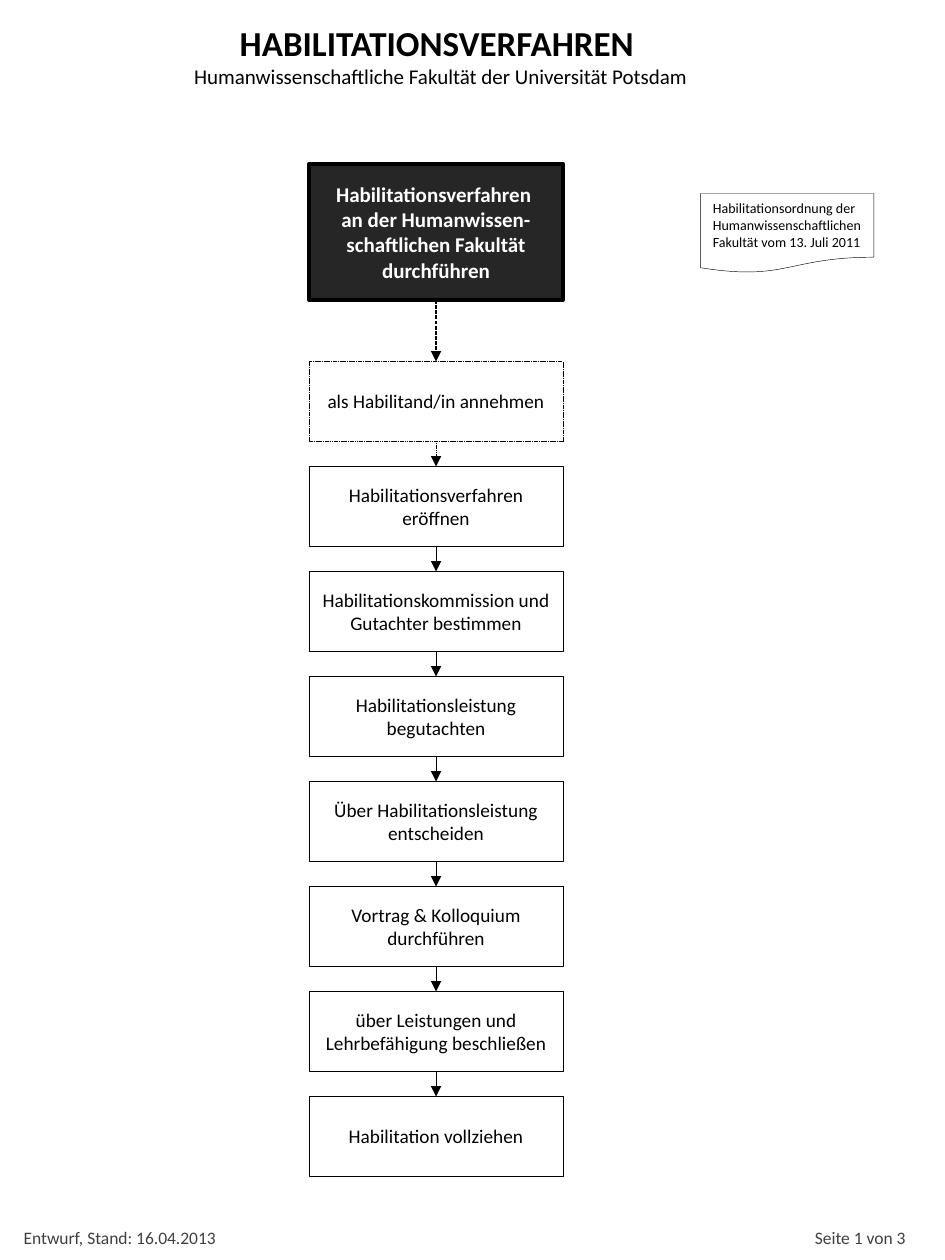
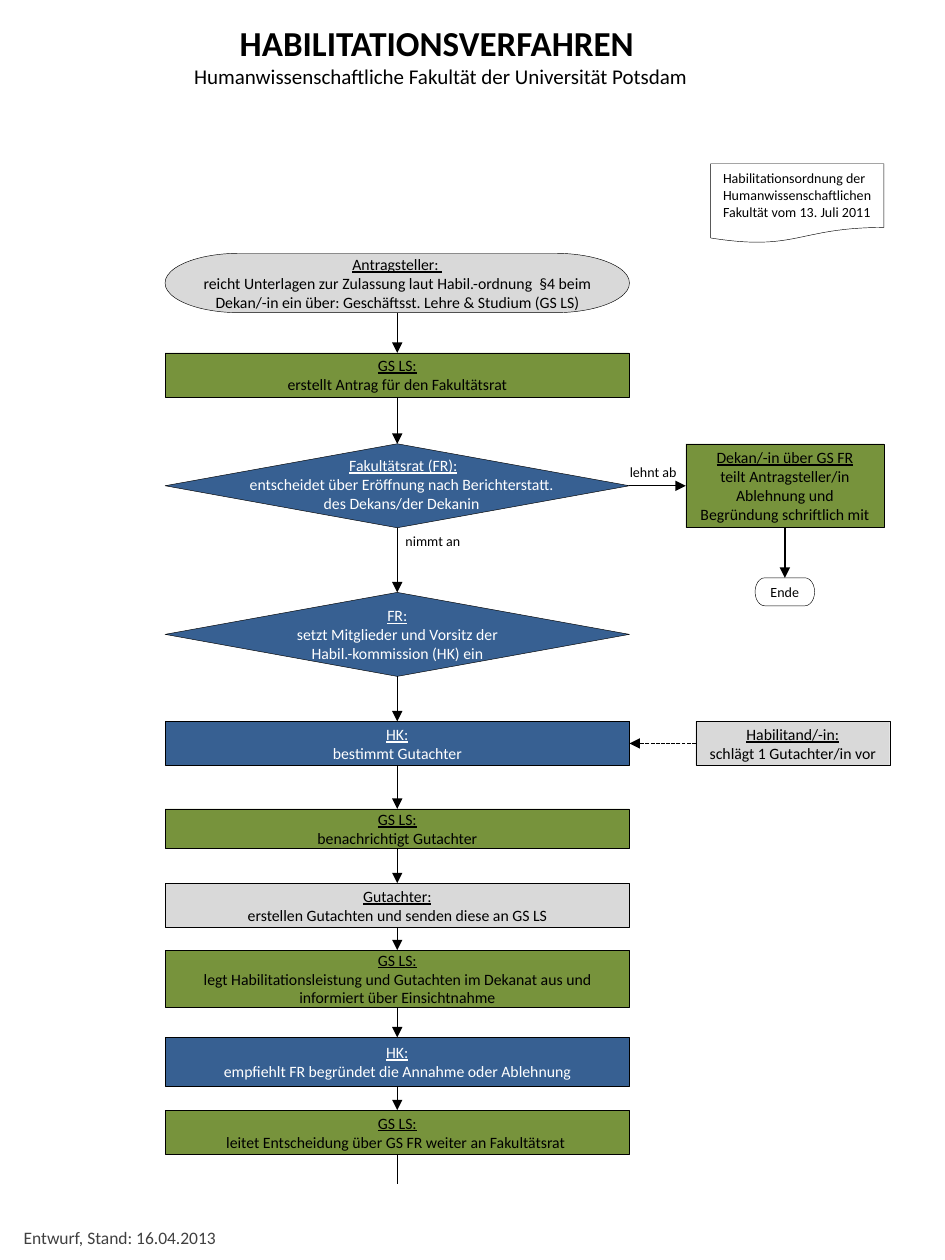
"""Build two flowchart slides on the habilitation procedure."""
from itertools import pairwise

from lxml import etree
from pptx import Presentation
from pptx.dml.color import RGBColor
from pptx.enum import dml, shapes, text
from pptx.oxml import ns
from pptx.util import Pt

BLACK = RGBColor(0x00, 0x00, 0x00)
WHITE = RGBColor(0xFF, 0xFF, 0xFF)
CHARCOAL = RGBColor(0x26, 0x26, 0x26)
FOOTER_GRAY = RGBColor(0x40, 0x40, 0x40)
GRAY = RGBColor(0xD9, 0xD9, 0xD9)
BLUE = RGBColor(0x37, 0x60, 0x92)
GREEN = RGBColor(0x77, 0x93, 0x3C)

KIND = shapes.MSO_SHAPE
PROCESS, DECISION = KIND.FLOWCHART_PROCESS, KIND.FLOWCHART_DECISION
TERMINATOR, DOCUMENT = KIND.FLOWCHART_TERMINATOR, KIND.FLOWCHART_DOCUMENT
RECTANGLE = KIND.RECTANGLE
CENTER = text.PP_ALIGN.CENTER
DASHED = dml.MSO_LINE.SQUARE_DOT
TOP, LEFT, BOTTOM, RIGHT = range(4)

TITLE = "HABILITATIONSVERFAHREN "
SUBTITLE = "Humanwissenschaftliche Fakultät der Universität Potsdam"
DRAFT_NOTE = "Entwurf, Stand: 16.04.2013"
PAGE_NOTE = "Seite 1 von 3"
REGULATION = "Habilitationsordnung der Humanwissenschaftlichen Fakultät vom 13. Juli 2011"

START = ["Habilitationsverfahren ", "an der Humanwissen-schaftlichen Fakultät durchführen"]
STEPS = [
    "als Habilitand/in annehmen",
    "Habilitationsverfahren eröffnen",
    "Habilitationskommission und Gutachter bestimmen",
    "Habilitationsleistung begutachten",
    "Über Habilitationsleistung entscheiden",
    "Vortrag & Kolloquium durchführen",
    "über Leistungen und Lehrbefähigung beschließen",
    "Habilitation vollziehen",
]
COUNCIL_TEXT = ["Fakultätsrat (FR):", "entscheidet über Eröffnung nach Berichterstatt. ",
                "des Dekans/der Dekanin "]
FLOW = [
    (TERMINATOR, GRAY, 144.7, 34, ["Antragsteller: ", "reicht Unterlagen zur Zulassung laut Habil.-ordnung  §4 beim "
                                   "Dekan/-in ein über: Geschäftsst. Lehre & Studium (GS LS)"]),
    (RECTANGLE, GREEN, 201.6, 25.2, ["GS LS:", "erstellt Antrag für den Fakultätsrat"]),
    (DECISION, BLUE, 253.6, 48, []),
    (DECISION, BLUE, 338.5, 48, ["FR:", "setzt Mitglieder und Vorsitz der Habil.-kommission (HK) ein"]),
    (PROCESS, BLUE, 412.2, 25.2, ["HK:", "bestimmt Gutachter"]),
    (RECTANGLE, GREEN, 462.2, 22.6, ["GS LS:", "benachrichtigt Gutachter"]),
    (RECTANGLE, GRAY, 504.7, 25.2, ["Gutachter:", "erstellen Gutachten und senden diese an GS LS"]),
    (RECTANGLE, GREEN, 543, 32.6, ["GS LS:", "legt Habilitationsleistung und Gutachten im Dekanat aus "
                                   "und informiert über Einsichtnahme"]),
    (RECTANGLE, BLUE, 592.8, 28, ["HK:", "empfiehlt FR begründet die Annahme oder Ablehnung"]),
    (RECTANGLE, GREEN, 634.4, 25.2, ["GS LS:", "leitet Entscheidung über GS FR weiter an Fakultätsrat "]),
]
COUNCIL_ROW, REVIEWER_ROW = 2, 4
REJECTION = ["Dekan/-in über GS FR", "teilt Antragsteller/in Ablehnung und Begründung schriftlich mit"]
PROPOSAL = ["Habilitand/-in:", "schlägt 1 Gutachter/in vor"]

STEP_LEFT, STEP_WIDTH, STEP_HEIGHT = 176.8, 144.8, 45.4
FIRST_STEP_TOP, STEP_PITCH = 206.6, 60
FLOW_LEFT, FLOW_WIDTH = 94.3, 265.4

TITLE_STYLE = {"size": Pt(20), "bold": True}
SUBTITLE_STYLE = {"size": Pt(12)}
START_STYLE = {"size": Pt(12), "bold": True}
STEP_STYLE = {"size": Pt(11)}
FOOTER_STYLE = {"size": Pt(10)}
FLOW_STYLE = {"size": Pt(9)}
HEADING_STYLE = {**FLOW_STYLE, "underline": True}
LABEL_STYLE = {"size": Pt(8)}


def write(shape, lines, color=BLACK, align=None, **frame_format):
    """Fill a shape with (content, style) lines, one paragraph each."""
    frame = shape.text_frame
    for name, value in {"word_wrap": True, **frame_format}.items():
        setattr(frame, name, value)
    for index, (content, style) in enumerate(lines):
        paragraph = frame.add_paragraph() if index else frame.paragraphs[0]
        paragraph.alignment = align
        run = paragraph.add_run()
        run.text = content
        for name, value in {"name": "Calibri", **style}.items():
            setattr(run.font, name, value)
        run.font.color.rgb = color


def add_label(slide, box, lines, color=BLACK, align=None):
    """Add a text box that grows with its text."""
    label = slide.shapes.add_textbox(*map(Pt, box))
    write(label, lines, color, align, auto_size=text.MSO_AUTO_SIZE.SHAPE_TO_FIT_TEXT)


def set_line(line, width, dash=None):
    """Give a line its black stroke."""
    line.color.rgb = BLACK
    line.width = Pt(width)
    if dash is not None:
        line.dash_style = dash


def add_box(slide, kind, box, lines=(), fill=None, border=0.25, dash=None, wrap=True):
    """Add an outlined flowchart shape with centred text."""
    shape = slide.shapes.add_shape(kind, *map(Pt, box))
    shape.shadow.inherit = False
    if fill is None:
        shape.fill.background()
    else:
        shape.fill.solid()
        shape.fill.fore_color.rgb = fill
    set_line(shape.line, border, dash)
    color = WHITE if fill in (BLUE, CHARCOAL) else BLACK
    write(shape, lines, color, CENTER, vertical_anchor=text.MSO_ANCHOR.MIDDLE, word_wrap=wrap)
    return shape


def headed(lines):
    """Underline the first line, which names who acts."""
    return [(line, FLOW_STYLE if index else HEADING_STYLE) for index, line in enumerate(lines)]


def add_line(slide, points, width=0.75, dash=None):
    """Add a straight line without a shadow."""
    line = slide.shapes.add_connector(shapes.MSO_CONNECTOR.STRAIGHT, *map(Pt, points))
    set_line(line.line, width, dash)
    etree.SubElement(line._element.spPr, ns.qn("a:effectLst"))
    return line


def add_arrow(slide, source, target, sites=(BOTTOM, TOP), width=0.75, dash=None):
    """Join two shapes by an arrow glued to their connection sites."""
    arrow = add_line(slide, (0, 0, 0, 0), width, dash)
    arrow.begin_connect(source, sites[0])
    arrow.end_connect(target, sites[1])
    etree.SubElement(arrow.line._get_or_add_ln(), ns.qn("a:tailEnd"), type="triangle")


def add_page(presentation, regulation_left, regulation_top):
    """Add a slide with title, draft note and regulation document."""
    slide = presentation.slides.add_slide(presentation.slide_layouts[6])
    add_label(slide, (66.2, 8.6, 371.5, 46), [(TITLE, TITLE_STYLE), (SUBTITLE, SUBTITLE_STYLE)], align=CENTER)
    add_label(slide, (6.5, 697.7, 155.5, 19.4), [(DRAFT_NOTE, FOOTER_STYLE)], FOOTER_GRAY)
    add_box(slide, DOCUMENT, (regulation_left, regulation_top, 99, 45.4))
    add_label(slide, (regulation_left, regulation_top, 110.9, 36), [(REGULATION, LABEL_STYLE)])
    return slide


def build_overview(presentation):
    """Draw the chain of steps."""
    slide = add_page(presentation, 400.3, 110.6)
    add_label(slide, (458.6, 697.7, 78.5, 19.4), [(PAGE_NOTE, FOOTER_STYLE)], FOOTER_GRAY)
    previous = add_box(slide, PROCESS, (STEP_LEFT, 93.6, STEP_WIDTH, 77.8),
                       [(line, START_STYLE) for line in START], CHARCOAL, 2.25)
    for index, step in enumerate(STEPS):
        box = (STEP_LEFT, FIRST_STEP_TOP + index * STEP_PITCH, STEP_WIDTH, STEP_HEIGHT)
        shape = add_box(slide, PROCESS, box, [(step, STEP_STYLE)], dash=None if index else DASHED)
        add_arrow(slide, previous, shape, width=0.25 if index else 0.75, dash=DASHED if index < 2 else None)
        previous = shape


def build_procedure(presentation):
    """Draw the detailed flow with its side branches."""
    slide = add_page(presentation, 406.1, 93.6)
    flow = [add_box(slide, kind, (FLOW_LEFT, top, FLOW_WIDTH, height), headed(lines), fill)
            for kind, fill, top, height, lines in FLOW]
    for source, target in pairwise(flow):
        add_arrow(slide, source, target)
    center = FLOW_LEFT + FLOW_WIDTH / 2
    add_line(slide, (center, 659.6, center, 676.8))
    add_label(slide, (103, 257, 254.9, 40.3), headed(COUNCIL_TEXT), WHITE, CENTER)

    rejection = add_box(slide, RECTANGLE, (391.9, 253.6, 113.2, 48), headed(REJECTION), GREEN)
    end = add_box(slide, TERMINATOR, (431.5, 330.2, 34, 16), [("Ende", LABEL_STYLE)], wrap=False)
    proposal = add_box(slide, RECTANGLE, (397.6, 412.2, 110.9, 25.2), headed(PROPOSAL), GRAY)
    add_arrow(slide, flow[COUNCIL_ROW], rejection, (RIGHT, LEFT))
    add_arrow(slide, rejection, end)
    add_arrow(slide, proposal, flow[REVIEWER_ROW], (LEFT, RIGHT), dash=DASHED)
    add_label(slide, (352.8, 261.4, 46.1, 17.3), [("lehnt ab", LABEL_STYLE)])
    add_label(slide, (224.6, 301, 51.1, 17.3), [("nimmt an", LABEL_STYLE)])


def main():
    """Build and save the presentation."""
    presentation = Presentation()
    presentation.slide_width, presentation.slide_height = Pt(540), Pt(720)
    build_overview(presentation)
    build_procedure(presentation)
    presentation.save("out.pptx")


if __name__ == "__main__":
    main()
